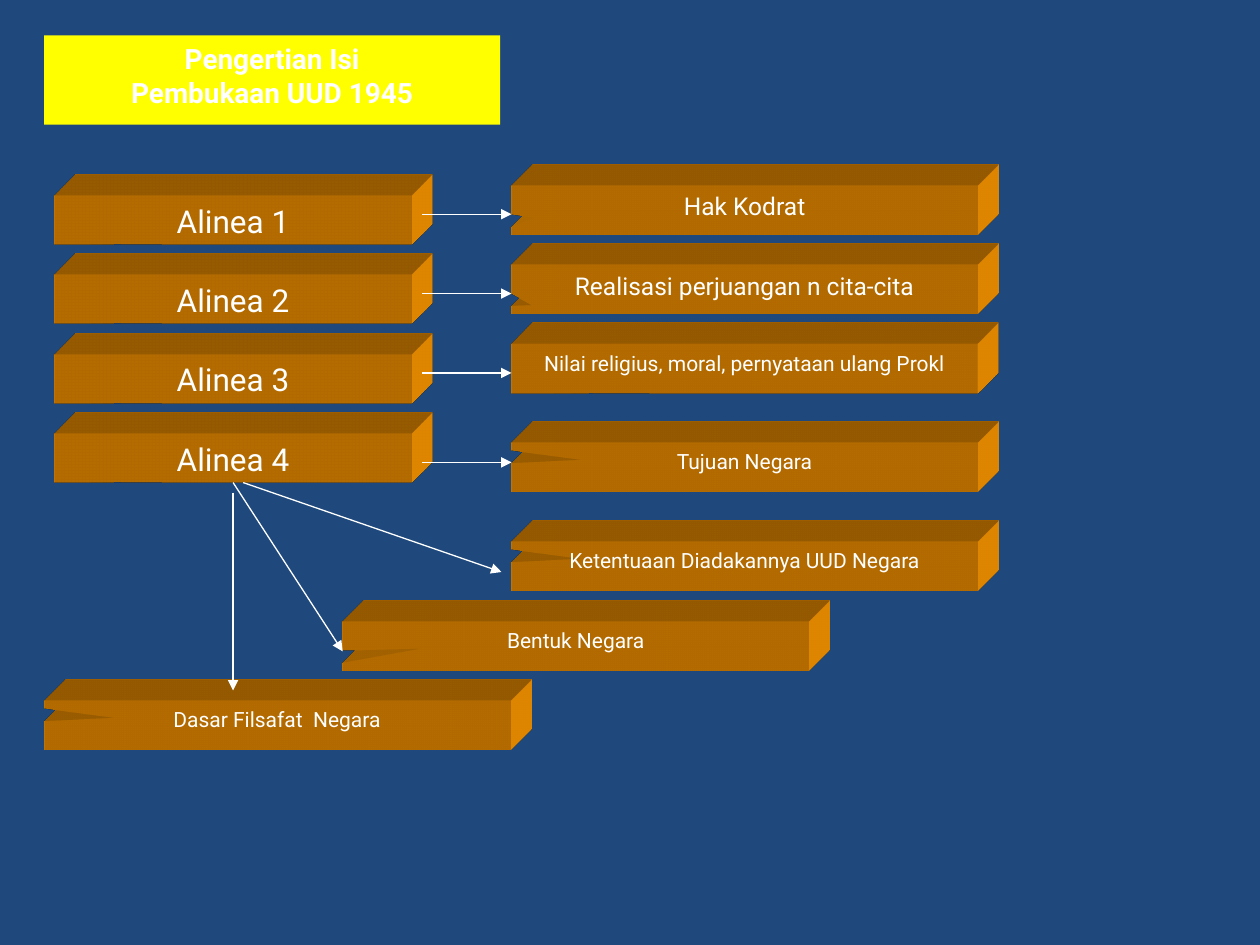
from dataclasses import dataclass

from pptx import Presentation
from pptx.dml.color import RGBColor
from pptx.enum.shapes import MSO_CONNECTOR as Link, MSO_SHAPE as Kind
from pptx.enum.text import MSO_ANCHOR as Anchor, PP_ALIGN as Align
from pptx.oxml import parse_xml
from pptx.oxml.ns import nsdecls
from pptx.util import Inches, Pt


@dataclass(frozen=True)
class Theme:
    font: str = "Roboto"
    back: str = "1F497D"
    head: str = "FFFF00"
    block: str = "FF9900"
    ink: str = "FFFFFF"
    title: int = 16
    large: int = 18
    medium: int = 14
    small: int = 12
    line: float = 0.75


theme = Theme()
NS = nsdecls("a")


def dress(shape, text, tip, fill, size, bold=False):
    """Give a callout its tip, fill, oblique depth and centred text."""
    shape.adjustments[0], shape.adjustments[1] = tip
    shape.fill.solid()
    shape.fill.fore_color.rgb = RGBColor.from_string(fill)
    shape.line.fill.background()
    shape.shadow.inherit = False
    props = shape._element.spPr
    props.append(parse_xml(
        f'<a:scene3d {NS}><a:camera prst="legacyObliqueTopRight"/>'
        '<a:lightRig rig="legacyFlat3" dir="b"/></a:scene3d>'))
    props.append(parse_xml(
        f'<a:sp3d {NS} extrusionH="430200" prstMaterial="legacyMatte">'
        '<a:bevelT w="13500" h="13500" prst="angle"/>'
        '<a:bevelB w="13500" h="13500" prst="angle"/>'
        f'<a:extrusionClr><a:srgbClr val="{fill}"/></a:extrusionClr></a:sp3d>'))
    frame = shape.text_frame
    frame.text = text
    frame.word_wrap = True
    frame.vertical_anchor = Anchor.TOP
    for para in frame.paragraphs:
        para.alignment = Align.CENTER
        para.line_spacing = 1.0
        para.space_before = Pt(0)
        for run in para.runs:
            font = run.font
            font.name, font.size, font.bold = theme.font, Pt(size), bold
            font.color.rgb = RGBColor.from_string(theme.ink)


deck = Presentation()
deck.slide_width, deck.slide_height = Inches(10), Inches(7.5)
slide = deck.slides.add_slide(deck.slide_layouts[5])
shapes = slide.shapes
slide.background.fill.solid()
slide.background.fill.fore_color.rgb = RGBColor.from_string(theme.back)

# Title, shaped as a callout
title = shapes.title
title.left, title.top = Inches(0.35), Inches(0.28)
title.width, title.height = Inches(3.62), Inches(0.71)
title._element.spPr.append(parse_xml(
    f'<a:prstGeom {NS} prst="wedgeRectCallout"><a:avLst/></a:prstGeom>'))
dress(title, "Pengertian Isi\nPembukaan UUD 1945", (-0.137, 0.38),
      theme.head, theme.title, True)

# The four paragraphs of the preamble
tall = 0.39
for i in range(4):
    alinea = shapes.add_shape(Kind.RECTANGULAR_CALLOUT, Inches(0.43),
                              Inches(1.55 + 0.63 * i), Inches(2.84), Inches(tall))
    dress(alinea, f"Alinea {i + 1}", (-0.43, 0.482), theme.block, theme.large)

# What each paragraph holds
topics = [
    ("Hak Kodrat", 4.06, 1.47, (-0.449, 0.152), theme.medium),
    ("Realisasi perjuangan n cita-cita", 4.06, 2.1, (-0.457, 0.319), theme.medium),
    ("Nilai religius, moral, pernyataan ulang Prokl", 4.06, 2.73,
     (-0.446, 0.482), theme.small),
    ("Tujuan Negara", 4.06, 3.51, (-0.352, -0.152), theme.small),
    ("Ketentuaan Diadakannya UUD Negara", 4.06, 4.3, (-0.352, -0.152), theme.small),
    ("Dasar Filsafat  Negara", 0.35, 5.56, (-0.352, -0.152), theme.small),
    ("Bentuk Negara", 2.72, 4.93, (-0.331, 0.046), theme.small),
]
for text, x, y, tip, size in topics:
    topic = shapes.add_shape(Kind.RECTANGULAR_CALLOUT, Inches(x), Inches(y),
                             Inches(3.7), Inches(tall))
    dress(topic, text, tip, theme.block, size)

# Arrows: four across, three fanning out below the last paragraph
routes = [(3.35, y, 4.06, y) for y in (1.7, 2.33, 2.96, 3.67)]
routes += [(1.93, 3.83, 3.98, 4.54), (1.85, 3.91, 1.85, 5.48),
           (1.85, 3.83, 2.72, 5.17)]
for route in routes:
    arrow = shapes.add_connector(Link.STRAIGHT, *map(Inches, route))
    arrow.line.color.rgb = RGBColor.from_string(theme.ink)
    arrow.line.width = Pt(theme.line)
    arrow.line._get_or_add_ln().append(
        parse_xml(f'<a:tailEnd {NS} type="triangle"/>'))
    arrow._element.spPr.append(parse_xml(f'<a:effectLst {NS}/>'))
arrow.begin_connect(alinea, 2)

deck.save("out.pptx")
